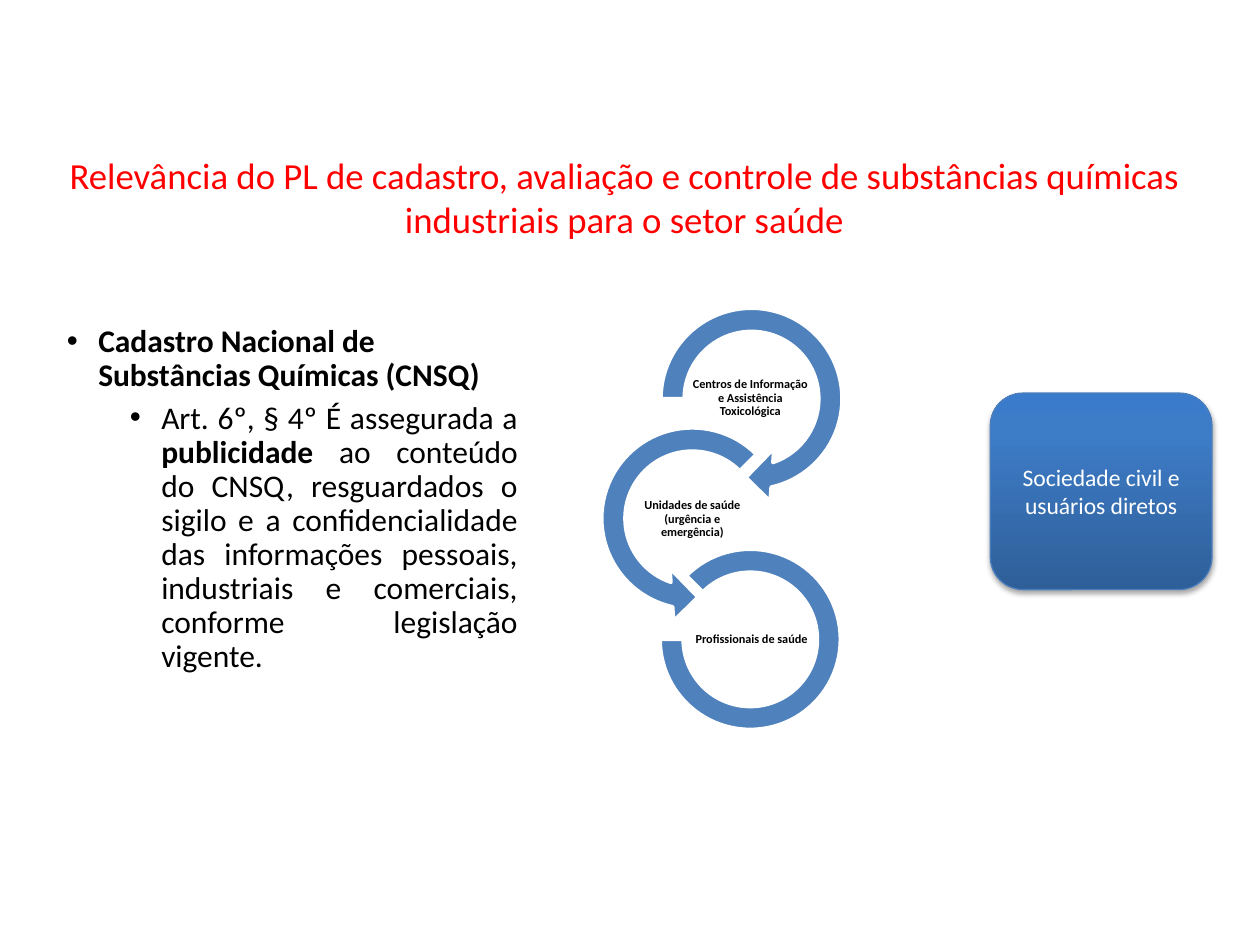
"""Build the slide on the national register of industrial chemicals and its users."""
from lxml.etree import SubElement
from pptx import Presentation
from pptx.dml.color import RGBColor
from pptx.enum.shapes import MSO_SHAPE
from pptx.enum.text import MSO_ANCHOR, MSO_AUTO_SIZE, PP_ALIGN
from pptx.oxml import parse_xml
from pptx.oxml.ns import nsdecls, qn
from pptx.util import Inches, Pt


def color(hex_string):
    """Turn a hex string into a colour."""
    return RGBColor.from_string(hex_string)


def add_run(paragraph, text, size, hex_string, bold=False):
    """Append one formatted run to a paragraph."""
    run = paragraph.add_run()
    run.text = text
    run.font.name = "Calibri"
    run.font.size = Pt(size)
    run.font.bold = bold
    run.font.color.rgb = color(hex_string)


prs = Presentation()
prs.slide_width, prs.slide_height = Inches(10), Inches(7.5)
slide = prs.slides.add_slide(prs.slide_layouts[5])
shapes = slide.shapes

title = shapes.title
title.left, title.top = Inches(0.38), Inches(1.16)
title.width, title.height = Inches(9.15), Inches(0.81)
title.text_frame.vertical_anchor = MSO_ANCHOR.TOP
title.text_frame.auto_size = MSO_AUTO_SIZE.NONE
heading = title.text_frame.paragraphs[0]
heading.alignment = PP_ALIGN.CENTER
add_run(heading, "Relevância do PL de cadastro, avaliação e controle de substâncias químicas "
        "industriais para o setor saúde", 21, "FF0000")

register = shapes.add_textbox(Inches(0.46), Inches(2.54), Inches(3.72), Inches(3.11)).text_frame
register.word_wrap = True
register.margin_left = register.margin_right = Inches(0.07)
register.margin_top = register.margin_bottom = Inches(0.04)
register_items = [
    (0, 0.25, 10, PP_ALIGN.LEFT, [("Cadastro Nacional de Substâncias Químicas (CNSQ)", True)]),
    (1, 0.75, 5, PP_ALIGN.JUSTIFY, [
        ("Art. 6º, § 4º É assegurada a ", False),
        ("publicidade", True),
        (" ao conteúdo do CNSQ, resguardados o sigilo e a confidencialidade das informações "
         "pessoais, industriais e comerciais, conforme legislação vigente.", False)]),
]
for level, indent, space, alignment, pieces in register_items:
    item = register.add_paragraph() if level else register.paragraphs[0]
    item.level = level
    item.alignment = alignment
    item.line_spacing = 0.9
    item.space_before = Pt(space)
    properties = item._p.get_or_add_pPr()
    properties.set("marL", str(Inches(indent)))
    properties.set("indent", str(Inches(-0.25)))
    SubElement(properties, qn("a:buFont"), typeface="Arial")
    SubElement(properties, qn("a:buChar"), char="•")
    for text, bold in pieces:
        add_run(item, text, 18, "000000", bold)

health_services = [
    (MSO_SHAPE.CIRCULAR_ARROW, 5.13, 2.33, 1.67, [0.11, 11.42, 45, 108, 0.125],
     5.49, 2.93, "Centros de Informação e Assistência Toxicológica"),
    (MSO_SHAPE.LEFT_CIRCULAR_ARROW, 4.66, 3.28, 1.67, [0.11, 11.42, 63, 189, 0.125],
     5.03, 3.89, "Unidades de saúde (urgência e emergência)"),
    (MSO_SHAPE.BLOCK_ARC, 5.24, 4.36, 1.43, [135, 108, 0.127],
     5.5, 4.85, "Profissionais de saúde"),
]
for preset, left, top, size, adjustments, label_left, label_top, text in health_services:
    ring = shapes.add_shape(preset, Inches(left), Inches(top), Inches(size), Inches(size))
    for index, value in enumerate(adjustments):
        ring.adjustments[index] = value
    ring.shadow.inherit = False
    ring.fill.solid()
    ring.fill.fore_color.rgb = color("4F81BD")
    ring.line.color.rgb = color("FFFFFF")
    ring.line.width = Pt(2)

    label = shapes.add_textbox(Inches(label_left), Inches(label_top),
                               Inches(0.93), Inches(0.46)).text_frame
    label.word_wrap = True
    label.vertical_anchor = MSO_ANCHOR.MIDDLE
    label.margin_left = label.margin_right = label.margin_top = label.margin_bottom = 0
    label.paragraphs[0].alignment = PP_ALIGN.CENTER
    label.paragraphs[0].line_spacing = 0.9
    add_run(label.paragraphs[0], text, 7, "000000", True)

society = shapes.add_shape(MSO_SHAPE.ROUNDED_RECTANGLE, Inches(7.86), Inches(3.12),
                           Inches(1.76), Inches(1.56))
society.line.color.rgb = color("4B7EBC")
society.line.width = Pt(0.75)
society.shadow.inherit = False
stops = "".join(f'<a:gs pos="{percent * 1000}"><a:srgbClr val="{shade}"/></a:gs>'
                for percent, shade in [(0, "2F5F99"), (80, "3D7CC7"), (100, "3A7CCB")])
society_properties = society._element.spPr
society_properties.find(qn("a:prstGeom")).addnext(parse_xml(
    f'<a:gradFill {nsdecls("a")} rotWithShape="1"><a:gsLst>{stops}</a:gsLst>'
    '<a:lin ang="16200000" scaled="0"/></a:gradFill>'))
society_properties.find(qn("a:effectLst")).append(parse_xml(
    f'<a:outerShdw {nsdecls("a")} blurRad="{Pt(3.1)}" dist="{Pt(1.8)}" dir="5400000" '
    'rotWithShape="0"><a:srgbClr val="000000"><a:alpha val="35000"/></a:srgbClr></a:outerShdw>'))
society.text_frame.word_wrap = True
society.text_frame.vertical_anchor = MSO_ANCHOR.MIDDLE
audience = society.text_frame.paragraphs[0]
audience.alignment = PP_ALIGN.CENTER
add_run(audience, "Sociedade civil e usuários diretos", 13.5, "FFFFFF")

prs.save("out.pptx")
